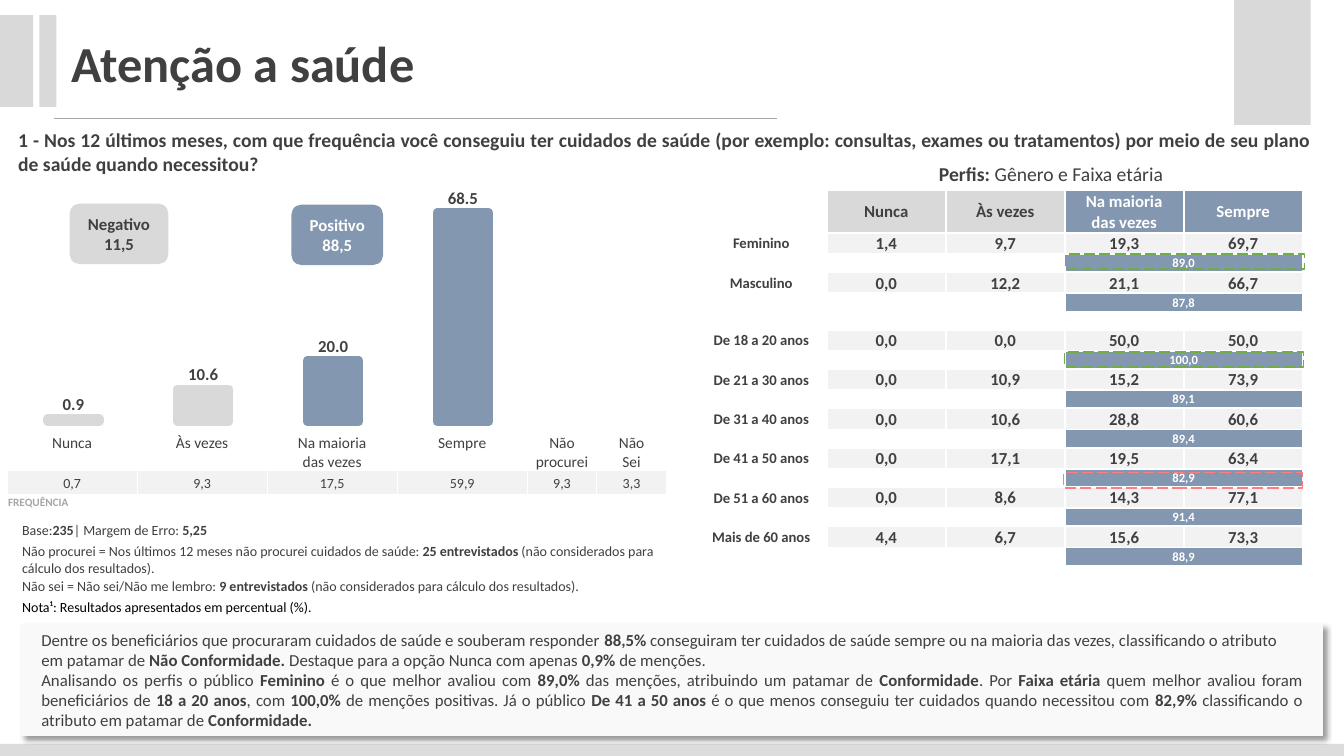
from dataclasses import dataclass
from typing import Optional

import lxml.etree
import pptx
import pptx.chart.data
import pptx.dml.color
import pptx.enum.chart
import pptx.enum.dml
import pptx.enum.shapes
import pptx.enum.text
import pptx.oxml
import pptx.oxml.ns
import pptx.util

Inches = pptx.util.Inches
Pt = pptx.util.Pt
Align = pptx.enum.text.PP_ALIGN
Anchor = pptx.enum.text.MSO_ANCHOR
Preset = pptx.enum.shapes.MSO_SHAPE
qn = pptx.oxml.ns.qn
NAMESPACE = 'xmlns:a="http://schemas.openxmlformats.org/drawingml/2006/main"'


@dataclass(frozen=True)
class Theme:
    font: str = "Calibri"
    dark: str = "404040"
    black: str = "000000"
    white: str = "FFFFFF"
    blue: str = "8497B0"
    gray: str = "D9D9D9"
    footer: str = "DCDCDC"
    pale: str = "F2F2F2"
    panel: str = "F9F9F9"
    muted: str = "A6A6A6"
    green: str = "70AD47"
    red: str = "FF7C80"
    title: float = 36
    heading: float = 14
    body: float = 12
    label: float = 11
    group: float = 10.5
    note: float = 10
    bar: float = 9
    tiny: float = 8


THEME = Theme()


@dataclass(frozen=True)
class Style:
    size: float
    color: str = THEME.dark
    bold: bool = False
    align: Align = Align.LEFT
    anchor: Anchor = Anchor.TOP


@dataclass(frozen=True)
class Block:
    place: tuple[float, float, float, float]
    fill: Optional[str] = None
    preset: Preset = Preset.RECTANGLE
    dash: Optional[str] = None
    text: str = ""
    style: Style = Style(THEME.body)


@dataclass(frozen=True)
class Profile:
    name: str
    shares: tuple[str, str, str, str]
    positive: str


def rgb(color: str) -> pptx.dml.color.RGBColor:
    return pptx.dml.color.RGBColor.from_string(color)


def write(frame, text: str, style: Style, insets=(0.1, 0.05, 0.1, 0.05)) -> None:
    """Newline starts a paragraph, | breaks a line, ** toggles bold."""
    frame.word_wrap = True
    frame.vertical_anchor = style.anchor
    frame.margin_left, frame.margin_top, frame.margin_right, frame.margin_bottom = map(Inches, insets)
    for index, content in enumerate(text.split("\n")):
        para = frame.paragraphs[0] if index == 0 else frame.add_paragraph()
        para.alignment = style.align
        para.font.name, para.font.size = THEME.font, Pt(style.size)
        para.font.color.rgb = rgb(style.color)
        parts = content.split("**")
        if len(parts) == 1:
            para.font.bold = style.bold
        for order, part in enumerate(parts):
            for number, line in enumerate(part.split("|") if len(parts) == 1 else [part]):
                if number:
                    para.add_line_break()
                if line:
                    span = para.add_run()
                    span.text = line
                    if len(parts) > 1:
                        span.font.bold = order % 2 == 1
        if not content:
            lxml.etree.SubElement(para._p, qn("a:endParaRPr"), sz=str(int(style.size * 100)))


def draw_block(page, block: Block):
    shape = page.shapes.add_shape(block.preset, *map(Inches, block.place))
    shape.shadow.inherit = False
    if block.fill:
        shape.fill.solid()
        shape.fill.fore_color.rgb = rgb(block.fill)
    else:
        shape.fill.background()
    if block.dash:
        shape.line.color.rgb = rgb(block.dash)
        shape.line.width = Pt(1)
        shape.line.dash_style = pptx.enum.dml.MSO_LINE.LONG_DASH
    else:
        shape.line.fill.background()
    if block.text:
        write(shape.text_frame, block.text, block.style)
    return shape


def draw_text(page, place, text: str, style: Style, insets=(0.1, 0.05, 0.1, 0.05)) -> None:
    box = page.shapes.add_textbox(*map(Inches, place))
    write(box.text_frame, text, style, insets)


def make_table(page, left: float, top: float, widths: list[float], heights: list[float]):
    frame = page.shapes.add_table(len(heights), len(widths), Inches(left), Inches(top),
                                  Inches(sum(widths)), Inches(sum(heights)))
    table = frame.table
    table.first_row = table.horz_banding = False
    table._tbl.tblPr.find(qn("a:tableStyleId")).text = "{2D5ABB26-0587-4C30-8999-92F81FD0307C}"
    for column, width in zip(table.columns, widths):
        column.width = Inches(width)
    for row, height in zip(table.rows, heights):
        row.height = Inches(height)
    return table


def set_cell(cell, text: str, style: Style, fill: Optional[str] = None, border: float = 0) -> None:
    write(cell.text_frame, text, style, (0.01, 0.01, 0.01, 0))
    cell.vertical_anchor = style.anchor
    for attribute in ("margin_left", "margin_top", "margin_right"):
        setattr(cell, attribute, Inches(0.01))
    cell.margin_bottom = 0
    if fill:
        cell.fill.solid()
        cell.fill.fore_color.rgb = rgb(fill)
    else:
        cell.fill.background()
    if border:
        for index, side in enumerate("LRTB"):
            cell._tc.tcPr.insert(index, pptx.oxml.parse_xml(
                f'<a:ln{side} {NAMESPACE} w="{int(Pt(border))}"><a:solidFill>'
                f'<a:srgbClr val="{THEME.white}"/></a:solidFill></a:ln{side}>'))


def draw_chart(page) -> None:
    data = pptx.chart.data.CategoryChartData(number_format="0.0")
    data.categories = ["1", "2", "3", "4"]
    data.add_series("Series 1", (68.5, 20, 10.6, 0.9))
    place = map(Inches, (-0.08, 1.46, 5.48, 3.36))
    chart = page.shapes.add_chart(pptx.enum.chart.XL_CHART_TYPE.COLUMN_CLUSTERED, *place, data).chart
    chart.has_legend = chart.has_title = False
    chart.font.name, chart.font.size = THEME.font, Pt(THEME.note)
    chart.font.color.rgb = rgb(THEME.black)
    chart.category_axis.reverse_order = True
    chart.value_axis.minimum_scale, chart.value_axis.maximum_scale = 0, 80
    chart.value_axis.has_major_gridlines = False
    chart.category_axis.visible = chart.value_axis.visible = False
    plot = chart.plots[0]
    plot.gap_width, plot.overlap, plot.vary_by_categories = 150, -25, False
    for index, color in enumerate((THEME.blue, THEME.blue, THEME.gray, THEME.gray)):
        look = plot.series[0].points[index].format
        look.fill.solid()
        look.fill.fore_color.rgb = look.line.color.rgb = rgb(color)
        look.line.width = Pt(6)
        lxml.etree.SubElement(look.line._ln, qn("a:round"))
    plot.has_data_labels = True
    labels = plot.data_labels
    labels.show_value, labels.number_format, labels.number_format_is_linked = True, "0.0", False
    labels.position = pptx.enum.chart.XL_LABEL_POSITION.OUTSIDE_END
    labels.font.name, labels.font.size, labels.font.bold = THEME.font, Pt(THEME.body), True
    labels.font.color.rgb = rgb(THEME.dark)
    # Fixed plot area
    area = chart._chartSpace.chart.plotArea
    for old in area.findall(qn("c:layout")):
        area.remove(old)
    layout = lxml.etree.Element(qn("c:layout"))
    area.insert(0, layout)
    manual = lxml.etree.SubElement(layout, qn("c:manualLayout"))
    for tag, value in (("layoutTarget", "inner"), ("xMode", "edge"), ("yMode", "edge"),
                       ("x", "0.03"), ("y", "0.09"), ("w", "0.94"), ("h", "0.72")):
        lxml.etree.SubElement(manual, qn(f"c:{tag}"), val=value)


CENTER = Style(THEME.body, bold=True, align=Align.CENTER, anchor=Anchor.MIDDLE)
CENTER_WHITE = Style(THEME.body, THEME.white, True, Align.CENTER, Anchor.MIDDLE)
PROFILES = [
    Profile("Feminino", ("1,4", "9,7", "19,3", "69,7"), "89,0"),
    Profile("Masculino", ("0,0", "12,2", "21,1", "66,7"), "87,8"),
    Profile("De 18 a 20 anos", ("0,0", "0,0", "50,0", "50,0"), "100,0"),
    Profile("De 21 a 30 anos", ("0,0", "10,9", "15,2", "73,9"), "89,1"),
    Profile("De 31 a 40 anos", ("0,0", "10,6", "28,8", "60,6"), "89,4"),
    Profile("De 41 a 50 anos", ("0,0", "17,1", "19,5", "63,4"), "82,9"),
    Profile("De 51 a 60 anos", ("0,0", "8,6", "14,3", "77,1"), "91,4"),
    Profile("Mais de 60 anos", ("4,4", "6,7", "15,6", "73,3"), "88,9"),
]
FREQUENCIES = [("Nunca", "0,7"), ("Às vezes", "9,3"), ("Na maioria\ndas vezes", "17,5"),
               ("Sempre", "59,9"), ("Não procurei", "9,3"), ("Não\nSei", "3,3")]
NOTES = [
    "Base:**235**| Margem de Erro: **5,25**",
    "Não procurei = Nos últimos 12 meses não procurei cuidados de saúde: **25 entrevistados** (não considerados para cálculo dos resultados).",
    "Não sei = Não sei/Não me lembro: **9 entrevistados** (não considerados para cálculo dos resultados).",
    "Nota¹: Resultados apresentados em percentual (%).",
]
ANALYSIS = (
    "Dentre os beneficiários que procuraram cuidados de saúde e souberam responder **88,5% **conseguiram ter cuidados de saúde sempre ou na maioria das vezes, classificando o atributo em patamar de **Não Conformidade. **Destaque para a opção Nunca com apenas **0,9% **de menções.\n"
    "Analisando os perfis o público **Feminino **é o que melhor avaliou com **89,0% **das menções, atribuindo um patamar de** Conformidade**. Por **Faixa etária **quem melhor avaliou foram beneficiários de **18 a 20 anos**, com **100,0%** de menções positivas. Já o público **De 41 a 50 anos **é o que menos conseguiu ter cuidados quando necessitou com **82,9%** classificando o atributo em patamar de **Conformidade.**"
)


def draw_profiles(page) -> None:
    table = make_table(page, 6.9, 1.89, [1.3] + [1.18] * 4, [0.42] + [0.2] * 17)
    headers = ["", "Nunca", "Às vezes", "Na maioria|das vezes", "Sempre"]
    fills = [None, THEME.gray, THEME.gray, THEME.blue, THEME.blue]
    for column, (header, fill) in enumerate(zip(headers, fills)):
        set_cell(table.cell(0, column), header, CENTER_WHITE if fill == THEME.blue else CENTER, fill, 1.5)
    group = Style(THEME.group, bold=True, align=Align.CENTER, anchor=Anchor.MIDDLE)
    share = Style(THEME.body, bold=True, align=Align.CENTER, anchor=Anchor.BOTTOM)
    bar = Style(THEME.bar, THEME.white, True, Align.CENTER, Anchor.MIDDLE)
    lines = [line for profile in PROFILES for line in ((profile.name, *profile.shares),
                                                      ("", "", "", profile.positive, ""))]
    lines.insert(4, ("",) * 5)  # gap between gender and age
    for row, line in enumerate(lines, 1):
        table.rows[row].height = Inches(0.21 if line[0] else 0.18)
        for column, text in enumerate(line):
            style = bar if not line[0] else share if column else group
            fill = THEME.pale if line[0] and column else THEME.blue if line[3] and column > 2 else None
            set_cell(table.cell(row, column), text, style, fill, 1.5)
        if not line[0]:
            table.cell(row, 3).merge(table.cell(row, 4))
            if row < 10:
                table.cell(row, 1).merge(table.cell(row, 2))


def draw_notes(page) -> None:
    table = make_table(page, 0.21, 5.17, [6.54], [0.21, 0.34, 0.21, 0.21])
    for row, note in enumerate(NOTES):
        color = THEME.black if row == len(NOTES) - 1 else THEME.dark
        set_cell(table.cell(row, 0), note, Style(THEME.note, color))


def draw_frequencies(page) -> None:
    table = make_table(page, 0.07, 4.29, [1.29] * 4 + [0.69] * 2, [0.38, 0.24, 0.24])
    for column, (label, value) in enumerate(FREQUENCIES):
        set_cell(table.cell(0, column), label, Style(THEME.label, align=Align.CENTER), None, 1)
        value_style = Style(THEME.note, align=Align.CENTER, anchor=Anchor.MIDDLE)
        set_cell(table.cell(1, column), value, value_style, THEME.pale, 1)
        caption = "" if column else "FREQUÊNCIA"
        set_cell(table.cell(2, column), caption, Style(THEME.tiny, THEME.muted, True), None, 1)
    table.cell(2, 0).merge(table.cell(2, 5))


def draw_analysis(page) -> None:
    panel = draw_block(page, Block((0.21, 6.19, 12.91, 1.11), THEME.panel))
    write(panel.text_frame, ANALYSIS, Style(THEME.body, anchor=Anchor.MIDDLE), (0.2, 0.04, 0.2, 0.04))
    panel.text_frame.paragraphs[1].alignment = Align.JUSTIFY
    panel._element.spPr.find(qn("a:effectLst")).append(pptx.oxml.parse_xml(
        f'<a:outerShdw {NAMESPACE} blurRad="{int(Pt(4))}" dist="{int(Pt(3))}" dir="2700000" algn="tl">'
        f'<a:srgbClr val="{THEME.black}"><a:alpha val="40000"/></a:srgbClr></a:outerShdw>'))


def main() -> None:
    deck = pptx.Presentation()
    deck.slide_width, deck.slide_height = Inches(13.33), Inches(7.5)
    page = deck.slides.add_slide(deck.slide_layouts[6])

    # Page decoration
    draw_block(page, Block((0, 7.38, 13.33, 0.12), THEME.footer))
    rule = page.shapes.add_connector(pptx.enum.shapes.MSO_CONNECTOR.STRAIGHT,
                                     Inches(0.54), Inches(1.17), Inches(7.71), Inches(1.17))
    rule.line.color.rgb, rule.line.width = rgb(THEME.muted), Pt(0.5)
    lxml.etree.SubElement(rule._element.spPr, qn("a:effectLst"))
    for place in ((-0.01, 0.15, 0.34, 0.91), (0.39, 0.15, 0.17, 0.91), (12.24, 0, 0.76, 1.24)):
        draw_block(page, Block(place, THEME.gray))

    # Chart, question and tables
    draw_chart(page)
    draw_text(page, (0.07, 1.21, 13.05, 0.58),
              "1 - Nos 12 últimos meses, com que frequência você conseguiu ter cuidados de saúde (por exemplo: consultas, exames ou tratamentos) por meio de seu plano de saúde quando necessitou?",
              Style(THEME.heading, bold=True, align=Align.JUSTIFY), (0.11, 0.06, 0.11, 0.06))
    draw_profiles(page)
    draw_notes(page)
    draw_frequencies(page)
    draw_text(page, (0.61, 0.27, 3.69, 0.71), "Atenção a saúde", Style(THEME.title, bold=True))
    draw_analysis(page)

    # Labels and highlights
    heading = Style(THEME.heading, align=Align.CENTER, anchor=Anchor.MIDDLE)
    rounded = Preset.ROUNDED_RECTANGLE
    for block in (
        Block((8.08, 1.53, 4.69, 0.39), None, rounded, None, "**Perfis: **Gênero e Faixa etária", heading),
        Block((0.69, 2.02, 0.98, 0.6), THEME.gray, rounded, None, "Negativo 11,5", CENTER),
        Block((2.89, 2.03, 0.91, 0.6), THEME.blue, rounded, None, "Positivo 88,5", CENTER_WHITE),
        Block((10.55, 4.69, 2.37, 0.15), dash=THEME.red),
        Block((10.56, 3.49, 2.37, 0.15), dash=THEME.green),
        Block((10.57, 2.52, 2.37, 0.15), dash=THEME.green),
    ):
        draw_block(page, block)
    deck.save("out.pptx")


if __name__ == "__main__":
    main()
